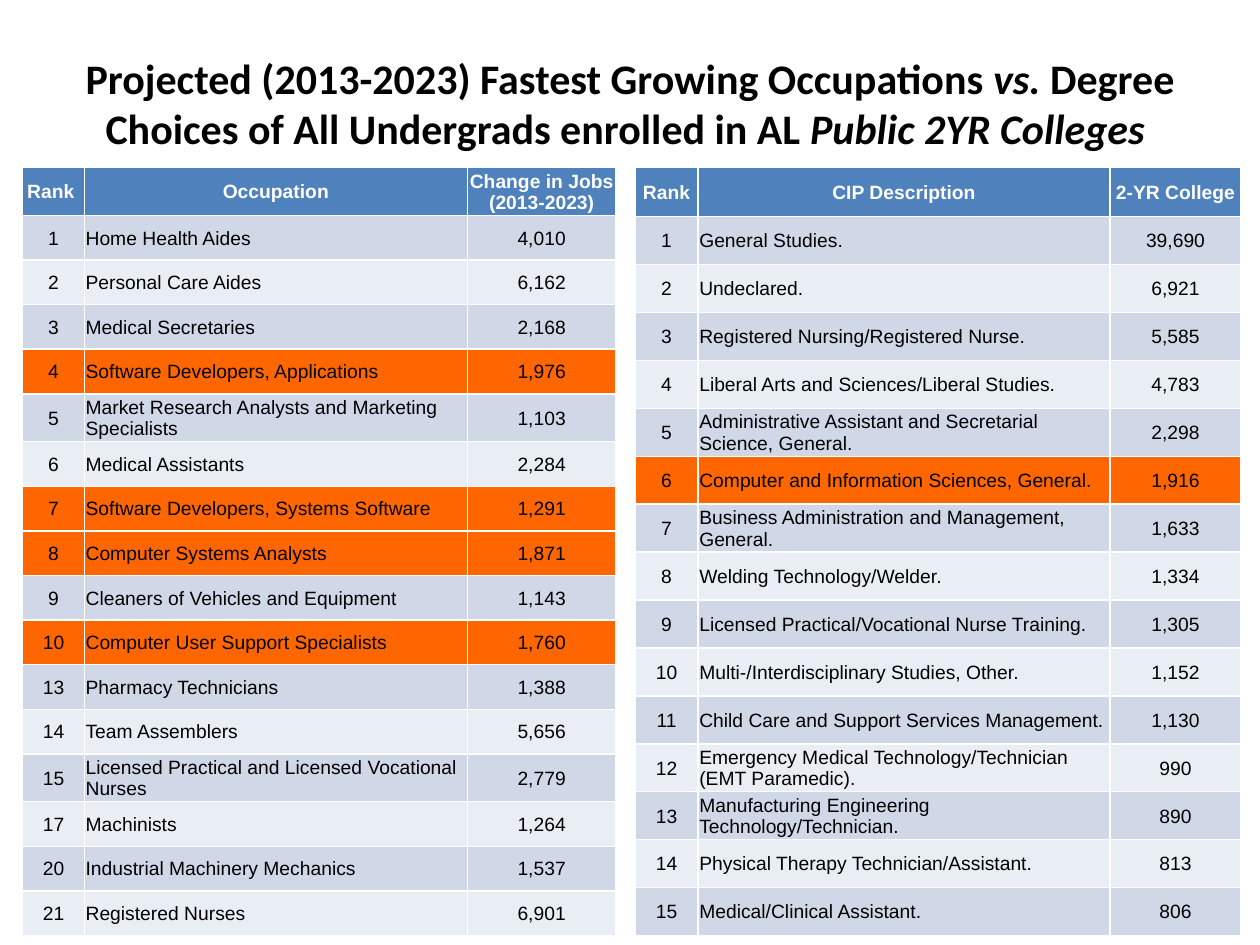
from dataclasses import dataclass

from pptx import Presentation
from pptx.dml.color import RGBColor
from pptx.enum.text import MSO_ANCHOR, MSO_AUTO_SIZE, PP_ALIGN
from pptx.util import Inches, Pt

CENTER, LEFT = PP_ALIGN.CENTER, PP_ALIGN.LEFT
MIDDLE = MSO_ANCHOR.MIDDLE
NO_AUTOFIT = MSO_AUTO_SIZE.NONE
TITLE_ONLY = 5


@dataclass(frozen=True)
class Theme:
    title_font: str = "Calibri"
    table_font: str = "Arial"
    title_size: Pt = Pt(24)
    table_size: Pt = Pt(11)
    text: RGBColor = RGBColor(0x00, 0x00, 0x00)
    header_text: RGBColor = RGBColor(0xFF, 0xFF, 0xFF)
    header: RGBColor = RGBColor(0x4F, 0x81, 0xBD)
    odd_row: RGBColor = RGBColor(0xD0, 0xD8, 0xE8)
    even_row: RGBColor = RGBColor(0xE9, 0xED, 0xF4)
    highlight: RGBColor = RGBColor(0xFF, 0x66, 0x00)


THEME = Theme()

TITLE_PARTS = [  # text, italic
    ("Projected (2013-2023) Fastest Growing Occupations ", False),
    ("vs.", True),
    (" Degree Choices of All Undergrads enrolled in AL ", False),
    ("Public 2YR Colleges ", True),
]

OCCUPATION_HEADER = ("Rank ", "Occupation", "Change in Jobs (2013-2023)")
OCCUPATIONS = [
    ("1", "Home Health Aides", "4,010"),
    ("2", "Personal Care Aides", "6,162"),
    ("3", "Medical Secretaries", "2,168"),
    ("4", "Software Developers, Applications", "1,976"),
    ("5", "Market Research Analysts and Marketing Specialists", "1,103"),
    ("6", "Medical Assistants", "2,284"),
    ("7", "Software Developers, Systems Software", "1,291"),
    ("8", "Computer Systems Analysts", "1,871"),
    ("9", "Cleaners of Vehicles and Equipment", "1,143"),
    ("10", "Computer User Support Specialists", "1,760"),
    ("13", "Pharmacy Technicians", "1,388"),
    ("14", "Team Assemblers", "5,656"),
    ("15", "Licensed Practical and Licensed Vocational Nurses", "2,779"),
    ("17", "Machinists", "1,264"),
    ("20", "Industrial Machinery Mechanics", "1,537"),
    ("21", "Registered Nurses", "6,901"),
]

DEGREE_HEADER = ("Rank", "CIP Description", "2-YR College")
DEGREES = [
    ("1", "General Studies.", "39,690"),
    ("2", "Undeclared.", "6,921"),
    ("3", "Registered Nursing/Registered Nurse.", "5,585"),
    ("4", "Liberal Arts and Sciences/Liberal Studies.", "4,783"),
    ("5", "Administrative Assistant and Secretarial Science, General.", "2,298"),
    ("6", "Computer and Information Sciences, General.", "1,916"),
    ("7", "Business Administration and Management, General.", "1,633"),
    ("8", "Welding Technology/Welder.", "1,334"),
    ("9", "Licensed Practical/Vocational Nurse Training.", "1,305"),
    ("10", "Multi-/Interdisciplinary Studies, Other.", "1,152"),
    ("11", "Child Care and Support Services Management.", "1,130"),
    ("12", "Emergency Medical Technology/Technician (EMT Paramedic).", "990"),
    ("13", "Manufacturing Engineering Technology/Technician.", "890"),
    ("14", "Physical Therapy Technician/Assistant.", "813"),
    ("15", "Medical/Clinical Assistant.", "806"),
]


def place_title(title, left, top, width, height):
    title.left, title.top, title.width, title.height = left, top, width, height
    frame = title.text_frame
    frame.word_wrap = True
    frame.auto_size = NO_AUTOFIT
    frame.vertical_anchor = MIDDLE
    heading = frame.paragraphs[0]
    heading.alignment = CENTER
    for text, italic in TITLE_PARTS:
        run = heading.add_run()
        run.text = text
        run.font.name = THEME.title_font
        run.font.size = THEME.title_size
        run.font.bold = True
        run.font.italic = italic
        run.font.color.rgb = THEME.text


def fill_cell(cell, text, background, alignment, is_header):
    cell.margin_left = cell.margin_top = cell.margin_right = Inches(0.01)
    cell.margin_bottom = 0
    cell.vertical_anchor = MIDDLE
    cell.fill.solid()
    cell.fill.fore_color.rgb = background
    cell.text_frame.text = text
    paragraph = cell.text_frame.paragraphs[0]
    paragraph.alignment = alignment
    font = paragraph.runs[0].font
    font.name = THEME.table_font
    font.size = THEME.table_size
    font.bold = is_header
    font.color.rgb = THEME.header_text if is_header else THEME.text


def row_color(row, rank, highlighted):
    if row == 0:
        return THEME.header
    if rank in highlighted:
        return THEME.highlight
    return THEME.odd_row if row % 2 else THEME.even_row


def add_ranking(slide, left, top, width, height, header, entries,
                column_widths, highlighted, tall_rows, tall_height):
    """Add a ranked table; rows outside tall_rows share the remaining height."""
    rows = [header, *entries]
    table = slide.shapes.add_table(
        len(rows), len(header), left, top, width, height).table
    table.horz_banding = False
    for column, column_width in zip(table.columns, column_widths):
        column.width = column_width

    shared_height = (height - tall_height * len(tall_rows)) // (len(rows) - len(tall_rows))
    for row, values in enumerate(rows):
        table.rows[row].height = tall_height if row in tall_rows else shared_height
        background = row_color(row, values[0], highlighted)
        for column, text in enumerate(values):
            alignment = LEFT if row and column == 1 else CENTER
            fill_cell(table.cell(row, column), text, background, alignment, row == 0)


def main():
    presentation = Presentation()
    presentation.slide_width, presentation.slide_height = Inches(10), Inches(7.5)
    slide = presentation.slides.add_slide(presentation.slide_layouts[TITLE_ONLY])

    place_title(slide.shapes.title, Inches(0.5), Inches(0.3), Inches(9), Inches(1.03))

    table_top, table_height = Inches(1.33), Inches(6.1)
    add_ranking(slide, Inches(0.18), table_top, Inches(4.7), table_height,
                OCCUPATION_HEADER, OCCUPATIONS,
                (Inches(0.49), Inches(3.04), Inches(1.18)),
                highlighted={"4", "7", "8", "10"},
                tall_rows={0, 5, 13}, tall_height=Inches(0.38))
    add_ranking(slide, Inches(5.04), table_top, Inches(4.8), table_height,
                DEGREE_HEADER, DEGREES,
                (Inches(0.5), Inches(3.27), Inches(1.04)),
                highlighted={"6"},
                tall_rows={0}, tall_height=Inches(0.39))

    presentation.save("out.pptx")


if __name__ == "__main__":
    main()
